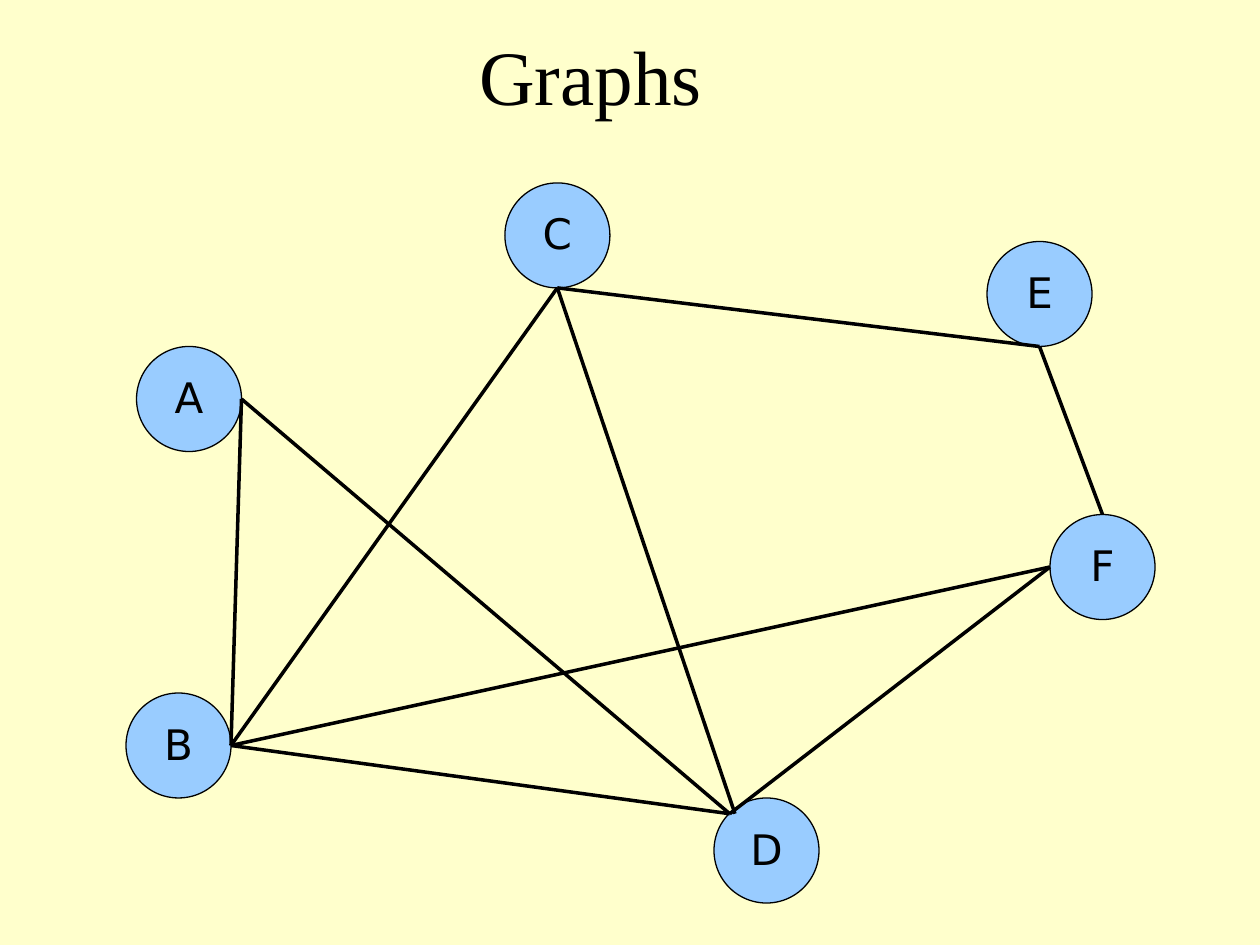
from dataclasses import dataclass
from typing import Any

from lxml.etree import SubElement
from pptx import Presentation
from pptx.dml.color import RGBColor
from pptx.enum.shapes import MSO_CONNECTOR, MSO_SHAPE
from pptx.enum.text import MSO_ANCHOR, MSO_AUTO_SIZE, PP_ALIGN
from pptx.oxml.ns import qn
from pptx.util import Pt


@dataclass(frozen=True)
class Theme:
    paper: RGBColor = RGBColor(0xFF, 0xFF, 0xCC)
    ink: RGBColor = RGBColor(0, 0, 0)
    disc: RGBColor = RGBColor(0x99, 0xCC, 0xFF)
    head: str = "Times New Roman"
    body: str = "DejaVu Sans"
    big: float = 44
    small: float = 24
    thin: float = 0.75
    thick: float = 2
    lead: float = 0.96


@dataclass(frozen=True)
class Node:
    x: float
    y: float


@dataclass(frozen=True)
class Edge:
    start: str
    start_side: str
    end: str
    end_side: str


THEME = Theme()
SIZE = 60
SIDES = {
    "top": (0.5, 0),
    "left": (0, 0.5),
    "bottom": (0.5, 1),
    "right": (1, 0.5),
    "corner": (0.15, 0.15),
    "inner": (0.2, 0.15),
}
NODES = {
    "D": Node(408, 456),
    "E": Node(564, 138),
    "F": Node(600, 294),
    "C": Node(288.5, 104.5),
    "B": Node(72, 396),
    "A": Node(78, 198),
}
EDGES = [
    Edge("C", "bottom", "D", "inner"),
    Edge("C", "bottom", "E", "bottom"),
    Edge("D", "corner", "A", "right"),
    Edge("A", "right", "B", "right"),
    Edge("F", "left", "B", "right"),
    Edge("F", "top", "E", "bottom"),
    Edge("D", "corner", "B", "right"),
    Edge("C", "bottom", "B", "right"),
    Edge("D", "corner", "F", "left"),
]
FRAME = {
    "margin_left": 0,
    "margin_right": 0,
    "margin_top": 0,
    "margin_bottom": 0,
    "vertical_anchor": MSO_ANCHOR.MIDDLE,
    "auto_size": MSO_AUTO_SIZE.NONE,
}


def apply(target: Any, values: dict[str, Any]) -> None:
    for name, value in values.items():
        setattr(target, name, value)


def write(shape: Any, text: str, face: str, size: float, wrap: bool) -> None:
    frame = shape.text_frame
    frame.text = text
    apply(frame, FRAME | {"word_wrap": wrap})
    para = frame.paragraphs[0]
    apply(para, {"alignment": PP_ALIGN.CENTER, "line_spacing": THEME.lead})
    font = para.runs[0].font
    apply(font, {"name": face, "size": Pt(size), "bold": False})
    font.color.rgb = THEME.ink


def stroke(shape: Any, width: float) -> None:
    shape.line.color.rgb = THEME.ink
    shape.line.width = Pt(width)


def draw_title(slide: Any, text: str) -> None:
    title = slide.shapes.title
    box = {"left": 31.5, "top": 18, "width": 612, "height": 54}
    apply(title, {name: Pt(value) for name, value in box.items()})
    write(title, text, THEME.head, THEME.big, True)


def draw_node(slide: Any, label: str, node: Node) -> None:
    disc = slide.shapes.add_shape(
        MSO_SHAPE.OVAL, Pt(node.x), Pt(node.y), Pt(SIZE), Pt(SIZE)
    )
    disc.shadow.inherit = False
    disc.fill.solid()
    disc.fill.fore_color.rgb = THEME.disc
    stroke(disc, THEME.thin)
    write(disc, label, THEME.body, THEME.small, False)


def locate(label: str, side: str) -> tuple[Pt, Pt]:
    node = NODES[label]
    across, down = SIDES[side]
    return Pt(node.x + across * SIZE), Pt(node.y + down * SIZE)


def draw_edge(slide: Any, edge: Edge) -> None:
    line = slide.shapes.add_connector(
        MSO_CONNECTOR.STRAIGHT,
        *locate(edge.start, edge.start_side),
        *locate(edge.end, edge.end_side),
    )
    stroke(line, THEME.thick)
    SubElement(line._element.spPr, qn("a:effectLst"))


def main() -> None:
    deck = Presentation()
    apply(deck, {"slide_width": Pt(720), "slide_height": Pt(540)})
    slide = deck.slides.add_slide(deck.slide_layouts.get_by_name("Title Only"))
    slide.background.fill.solid()
    slide.background.fill.fore_color.rgb = THEME.paper
    draw_title(slide, "Graphs")
    for label, node in NODES.items():
        draw_node(slide, label, node)
    for edge in EDGES:
        draw_edge(slide, edge)
    deck.save("out.pptx")


if __name__ == "__main__":
    main()
